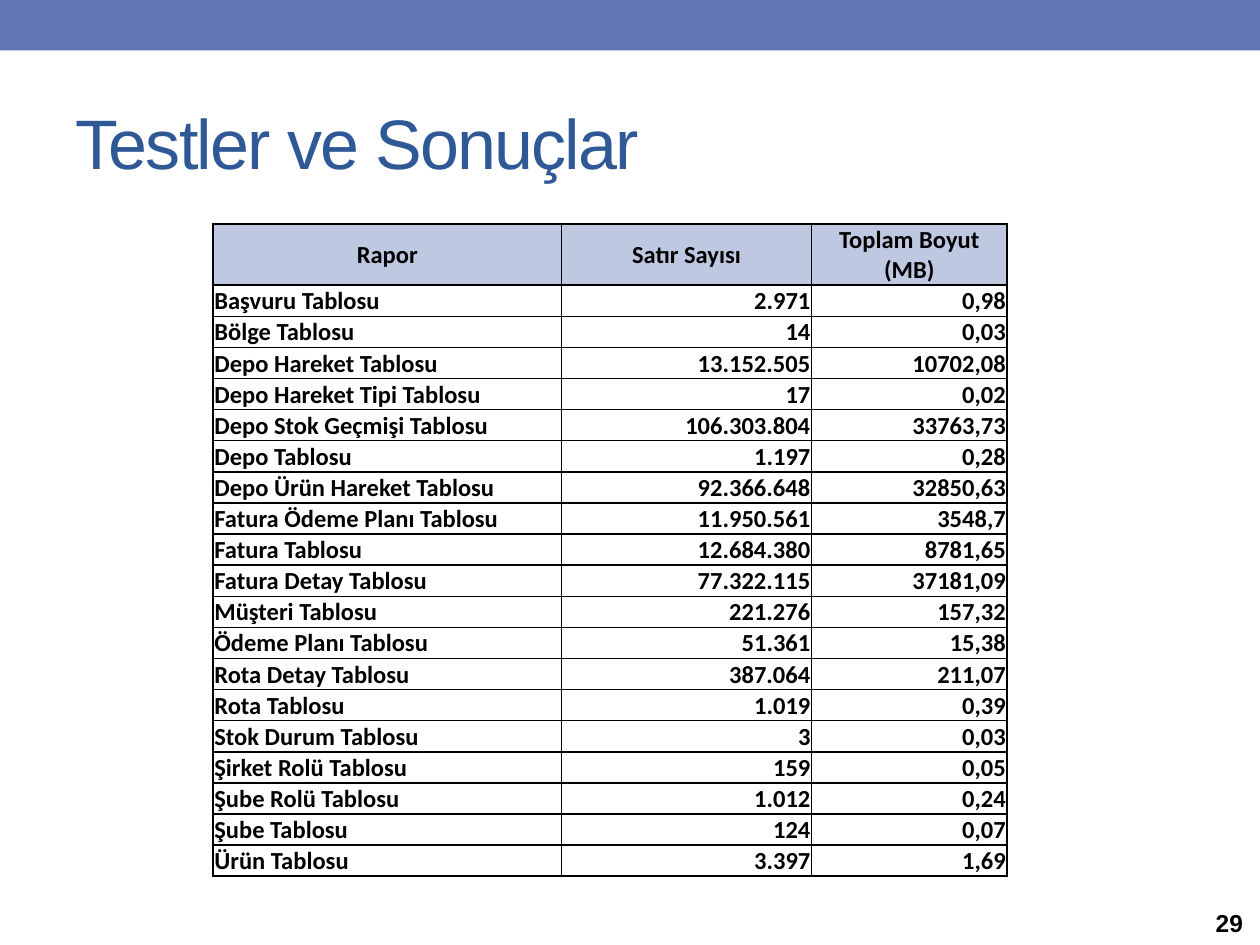
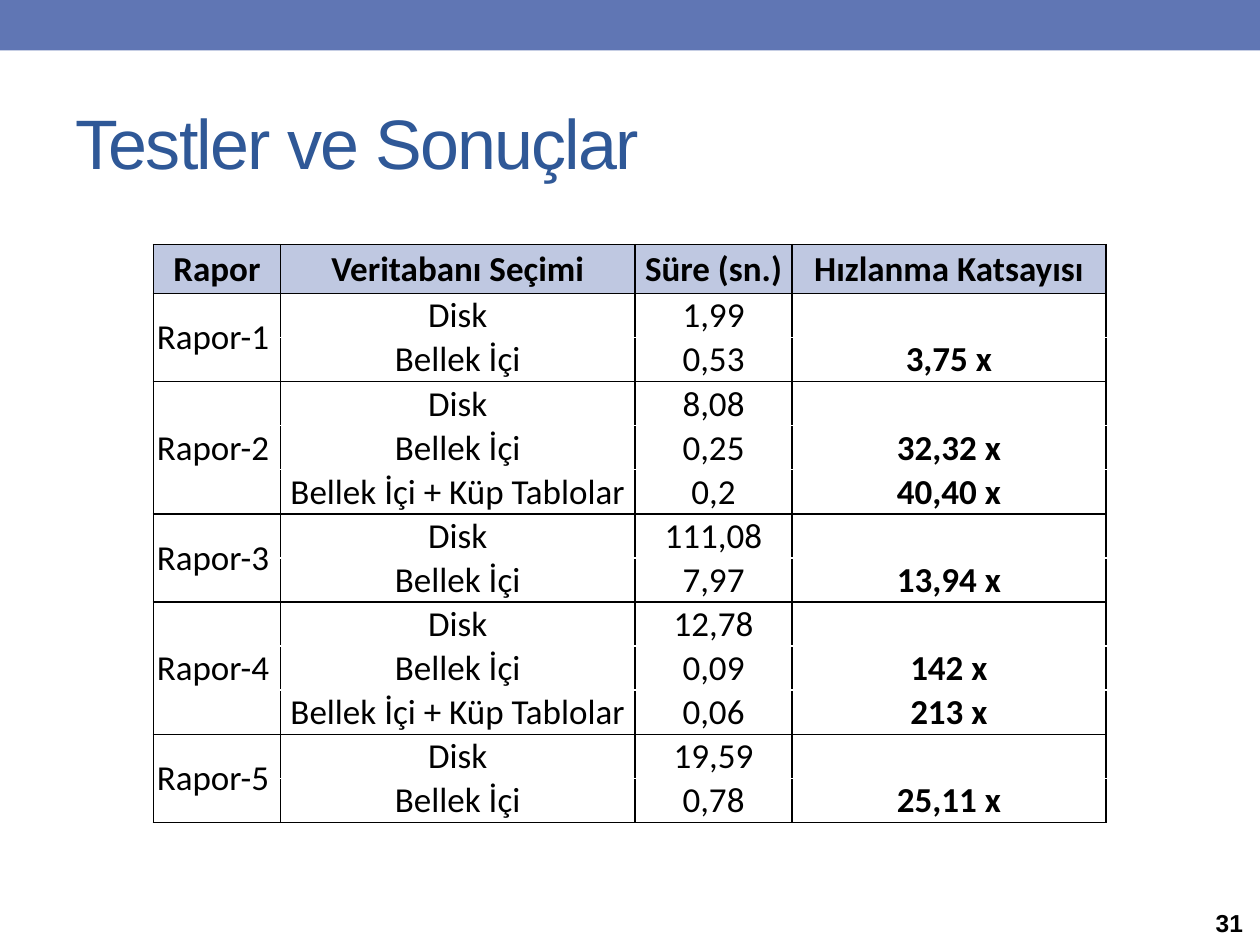
from lxml.etree import SubElement
from pptx import Presentation
from pptx.dml.color import RGBColor
from pptx.enum.shapes import MSO_SHAPE
from pptx.enum.text import MSO_ANCHOR, MSO_AUTO_SIZE, PP_ALIGN
from pptx.oxml.ns import qn
from pptx.util import Pt

BAND, TITLE, HEADER, BLACK, WHITE = "6076B4", "2F5897", "BFC8E1", "000000", "FFFFFF"
LEFT, CENTER, RIGHT = PP_ALIGN.LEFT, PP_ALIGN.CENTER, PP_ALIGN.RIGHT


def set_font(font, name, size, color, bold=False):
    font.name, font.size, font.bold = name, Pt(size), bold
    font.color.rgb = RGBColor.from_string(color)


def format_cell(cell, text, size, fill, bold, align, anchor, sides):
    """Fill one cell and draw black borders on the given sides (from "LRTB")."""
    cell.margin_left = cell.margin_right = cell.margin_top = Pt(0.7)
    cell.margin_bottom = 0
    cell.vertical_anchor = anchor
    cell.fill.solid()
    cell.fill.fore_color.rgb = RGBColor.from_string(fill)
    p = cell.text_frame.paragraphs[0]
    p.text = text
    p.alignment = align
    set_font(p.font, "Calibri", size, BLACK, bold)
    tcPr = cell._tc.get_or_add_tcPr()
    for i, side in enumerate(sides):
        ln = SubElement(tcPr, qn(f"a:ln{side}"), w=str(Pt(1)))
        solid = SubElement(ln, qn("a:solidFill"))
        SubElement(solid, qn("a:srgbClr"), val=BLACK)
        tcPr.insert(i, ln)


prs = Presentation()
prs.slide_width, prs.slide_height = Pt(720), Pt(540)

# Table contents
sizes = [
    ("Rapor", "Satır Sayısı", "Toplam Boyut (MB)"),
    ("Başvuru Tablosu", "2.971", "0,98"),
    ("Bölge Tablosu", "14", "0,03"),
    ("Depo Hareket Tablosu", "13.152.505", "10702,08"),
    ("Depo Hareket Tipi Tablosu", "17", "0,02"),
    ("Depo Stok Geçmişi Tablosu", "106.303.804", "33763,73"),
    ("Depo Tablosu", "1.197", "0,28"),
    ("Depo Ürün Hareket Tablosu", "92.366.648", "32850,63"),
    ("Fatura Ödeme Planı Tablosu", "11.950.561", "3548,7"),
    ("Fatura Tablosu", "12.684.380", "8781,65"),
    ("Fatura Detay Tablosu", "77.322.115", "37181,09"),
    ("Müşteri Tablosu", "221.276", "157,32"),
    ("Ödeme Planı Tablosu", "51.361", "15,38"),
    ("Rota Detay Tablosu", "387.064", "211,07"),
    ("Rota Tablosu", "1.019", "0,39"),
    ("Stok Durum Tablosu", "3", "0,03"),
    ("Şirket Rolü Tablosu", "159", "0,05"),
    ("Şube Rolü Tablosu", "1.012", "0,24"),
    ("Şube Tablosu", "124", "0,07"),
    ("Ürün Tablosu", "3.397", "1,69"),
]
databases = ["Disk", "Bellek İçi", "Bellek İçi + Küp Tablolar"]
reports = [  # (duration, speed-up) for each database choice
    [("1,99", ""), ("0,53", "3,75 x")],
    [("8,08", ""), ("0,25", "32,32 x"), ("0,2", "40,40 x")],
    [("111,08", ""), ("7,97", "13,94 x")],
    [("12,78", ""), ("0,09", "142 x"), ("0,06", "213 x")],
    [("19,59", ""), ("0,78", "25,11 x")],
]
speeds = [("Rapor", "Veritabanı Seçimi", "Süre (sn.)", "Hızlanma Katsayısı")]
spans = []  # (first row, last row) of each report
for number, runs in enumerate(reports, 1):
    spans.append((len(speeds), len(speeds) + len(runs) - 1))
    for i, (database, run) in enumerate(zip(databases, runs)):
        speeds.append((f"Rapor-{number} " if i == 0 else "", database, *run))

# Page number, rows, left, top, column widths, header height, row height
pages = [
    (29, sizes, 121.8, 128, [199, 143, 111.7], 35, 17.8),
    (31, speeds, 87.7, 139.8, [72.6, 202.6, 89.7, 179.4], 27.8, 25.2),
]
tables = []
for number, rows, left, top, widths, header_height, row_height in pages:
    s = prs.slides.add_slide(prs.slide_layouts[5])

    # Top band
    sp = s.shapes.add_shape(MSO_SHAPE.RECTANGLE, 0, 0, prs.slide_width, Pt(28.8))
    sp.shadow.inherit = False
    sp.fill.solid()
    sp.fill.fore_color.rgb = RGBColor.from_string(BAND)
    sp.line.fill.background()

    # Title
    sp = s.shapes.title
    sp.left, sp.top, sp.width, sp.height = Pt(36), Pt(42), Pt(648), Pt(78)
    tf = sp.text_frame
    tf.text = "Testler ve Sonuçlar"
    tf.auto_size = MSO_AUTO_SIZE.NONE
    tf.vertical_anchor = MSO_ANCHOR.MIDDLE
    p = tf.paragraphs[0]
    p.alignment = LEFT
    set_font(p.font, "Arial", 40, TITLE)
    p.runs[0]._r.get_or_add_rPr().set("spc", "-100")

    # Page number
    tf = s.shapes.add_textbox(Pt(687.6), Pt(514), Pt(32.4), Pt(26)).text_frame
    tf.word_wrap = True
    tf.vertical_anchor = MSO_ANCHOR.MIDDLE
    p = tf.paragraphs[0]
    p.text = str(number)
    set_font(p.font, "Arial", 14, BLACK, True)

    # Table grid
    heights = [header_height] + [row_height] * (len(rows) - 1)
    table = s.shapes.add_table(len(rows), len(widths), Pt(left), Pt(top),
                               Pt(sum(widths)), Pt(sum(heights))).table
    table.first_row = table.horz_banding = False
    for column, width in zip(table.columns, widths):
        column.width = Pt(width)
    for row, height in zip(table.rows, heights):
        row.height = Pt(height)
    tables.append(table)

size_table, speed_table = tables

# Table sizes: every cell is boxed
for r, row in enumerate(sizes):
    for c, text in enumerate(row):
        align = CENTER if r == 0 else RIGHT if c else LEFT
        anchor = MSO_ANCHOR.BOTTOM if r else MSO_ANCHOR.MIDDLE
        format_cell(size_table.cell(r, c), text, 14, WHITE if r else HEADER,
                    True, align, anchor, "LRTB")

# Report durations: horizontal lines only around each report
firsts = {0} | {first for first, last in spans}
lasts = {0} | {last for first, last in spans}
for r, row in enumerate(speeds):
    for c, text in enumerate(row):
        sides = "LR" + "T" * (r in firsts) + "B" * (r in lasts)
        if c == 0 and r in firsts:
            sides = "LRTB"
        format_cell(speed_table.cell(r, c), text, 20, WHITE if r else HEADER,
                    r == 0 or c == 3, CENTER, MSO_ANCHOR.MIDDLE, sides)
for first, last in spans:
    speed_table.cell(first, 0).merge(speed_table.cell(last, 0))

prs.save("out.pptx")
